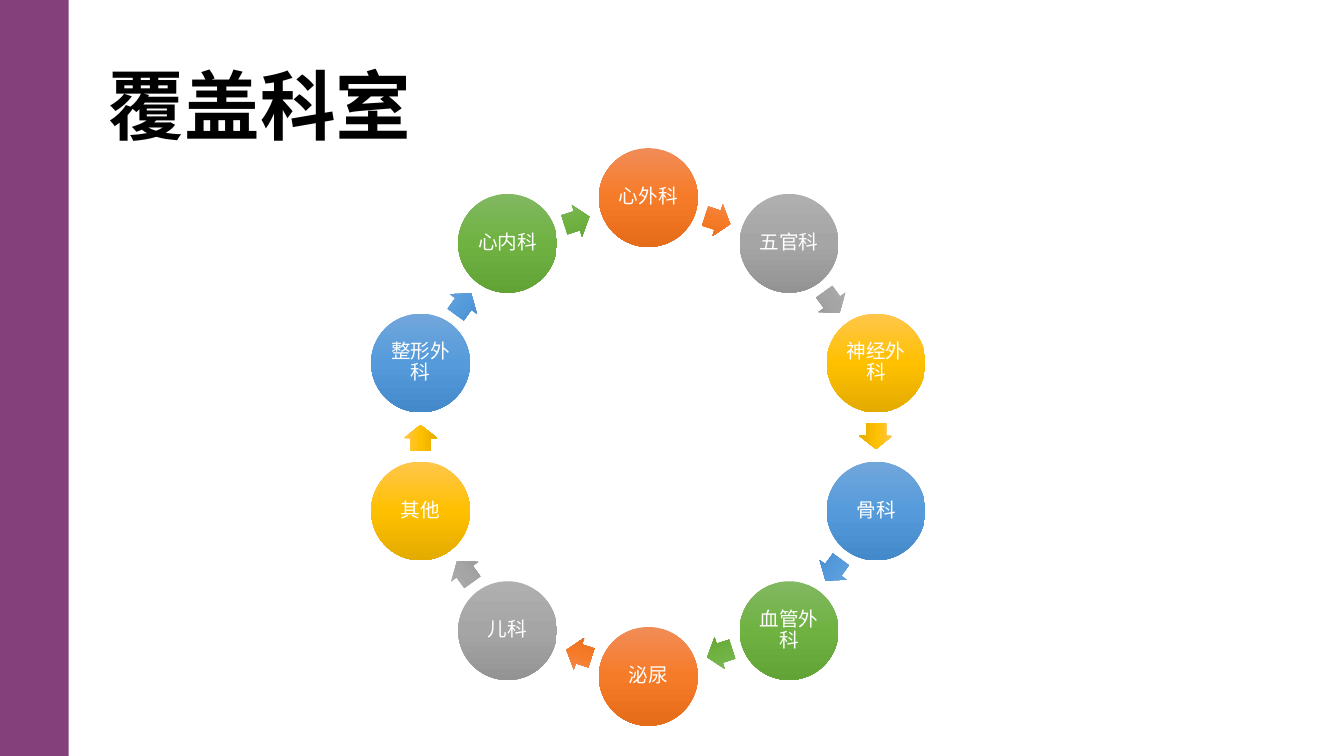
from copy import deepcopy
from dataclasses import dataclass
from math import cos, radians, sin

from lxml.etree import SubElement
from pptx import Presentation
from pptx.dml.color import RGBColor as Rgb
from pptx.enum.shapes import MSO_SHAPE as Kind
from pptx.enum.text import MSO_ANCHOR as Anchor, MSO_AUTO_SIZE as Fit, PP_ALIGN as Align
from pptx.oxml.ns import qn
from pptx.util import Emu, Pt


@dataclass(frozen=True)
class Theme:
    """Colours, font and type sizes of the slide."""
    font: str = "Noto Sans CJK SC"
    bar: str = "83407B"
    ink: str = "000000"
    pale: str = "FFFFFF"
    head: int = 54
    label: int = 14
    fills: tuple = (
        ("F18C57", "F67B28", "E56C19"),
        ("AFAFAF", "A5A5A5", "939393"),
        ("FFC64B", "FFC000", "E3AB00"),
        ("71A6DB", "559BDB", "448ACA"),
        ("81B861", "6FB242", "62A336"),
    )


THEME = Theme()
SCALE = 9144
WARDS = ("心外科", "五官科", "神经外科", "骨科", "血管外科",
         "泌尿", "儿科", "其他", "整形外科", "心内科")
NODE = 98
ARROW = (26, 33)
LAG = 1


def px(num):
    """Turn px into EMU."""
    return Emu(round(num * SCALE))


def write(frame, text, size, color, align, bold=False):
    """Write one line of text, centred in height, into a text frame."""
    frame.word_wrap = True
    frame.auto_size = Fit.NONE
    frame.vertical_anchor = Anchor.MIDDLE
    para = frame.paragraphs[0]
    para.alignment = align
    para.line_spacing = 0.9
    run = para.add_run()
    run.text = text
    font = run.font
    font.size, font.bold, font.name = Pt(size), bold, THEME.font
    font.color.rgb = Rgb.from_string(color)
    SubElement(run._r.rPr, qn("a:ea"), typeface=THEME.font)
    return para


def shade(shape, tones):
    """Fill a shape from top to bottom with three tones."""
    fill = shape.fill
    fill.gradient()
    fill.gradient_angle = 270
    stops = shape._element.spPr.find(".//" + qn("a:gsLst"))
    stops.append(deepcopy(stops[0]))
    for stop, spot, tone in zip(fill.gradient_stops, (0, 0.5, 1), tones):
        stop.position = spot
        stop.color.rgb = Rgb.from_string(tone)


def draw(slide, kind, box):
    """Add a preset shape without line or shadow."""
    shape = slide.shapes.add_shape(kind, *map(px, box))
    shape.shadow.inherit = False
    shape.line.fill.background()
    return shape


def centre(x, y, wide, high):
    """Give the box of a size centred on a point."""
    return x - wide / 2, y - high / 2, wide, high


def side(slide, box):
    """Draw the colour bar at the edge."""
    bar = draw(slide, Kind.RECTANGLE, box)
    bar.fill.solid()
    bar.fill.fore_color.rgb = Rgb.from_string(THEME.bar)


def head(slide, box, text):
    """Place and fill the title."""
    title = slide.shapes.title
    title.left, title.top, title.width, title.height = map(px, box)
    write(title.text_frame, text, THEME.head, THEME.ink, Align.LEFT, True)


def node(slide, box, text, tones):
    """Draw one labelled circle."""
    disc = draw(slide, Kind.OVAL, box)
    shade(disc, tones)
    frame = disc.text_frame
    frame.margin_left = frame.margin_right = px(2)
    frame.margin_top = frame.margin_bottom = px(2)
    para = write(frame, text, THEME.label, THEME.pale, Align.CENTER)
    para.space_after = Pt(5)


def arrow(slide, box, turn, tones):
    """Draw one block arrow turned along the ring."""
    mark = draw(slide, Kind.RIGHT_ARROW, box)
    mark.adjustments[0], mark.adjustments[1] = 0.6, 0.5
    mark.rotation = turn
    shade(mark, tones)


def ring(slide, box, names):
    """Place the circles and arrows of the cycle clockwise from the top."""
    left, top, wide, high = box
    mid_x, mid_y = left + wide / 2, top + high / 2
    reach = (high - NODE) / 2
    step = 360 / len(names)
    chord = reach * cos(radians(step / 2))
    for i, name in enumerate(names):
        tones = THEME.fills[i % len(THEME.fills)]
        turn = i * step
        ang = radians(turn)
        spot = mid_x + reach * sin(ang), mid_y - reach * cos(ang)
        node(slide, centre(*spot, NODE, NODE), name, tones)
        turn += step / 2
        ang = radians(turn)
        spot = (mid_x + chord * sin(ang) - LAG * cos(ang),
                mid_y - chord * cos(ang) - LAG * sin(ang))
        arrow(slide, centre(*spot, *ARROW), turn, tones)


def main():
    """Build and save the slide."""
    deck = Presentation()
    deck.slide_width, deck.slide_height = px(1333), px(750)
    slide = deck.slides.add_slide(deck.slide_layouts[5])
    side(slide, (0, 0, 68, 750))
    head(slide, (98, 37, 1150, 145), "覆盖科室")
    ring(slide, (368, 147, 550, 573), WARDS)
    deck.save("out.pptx")


if __name__ == "__main__":
    main()
